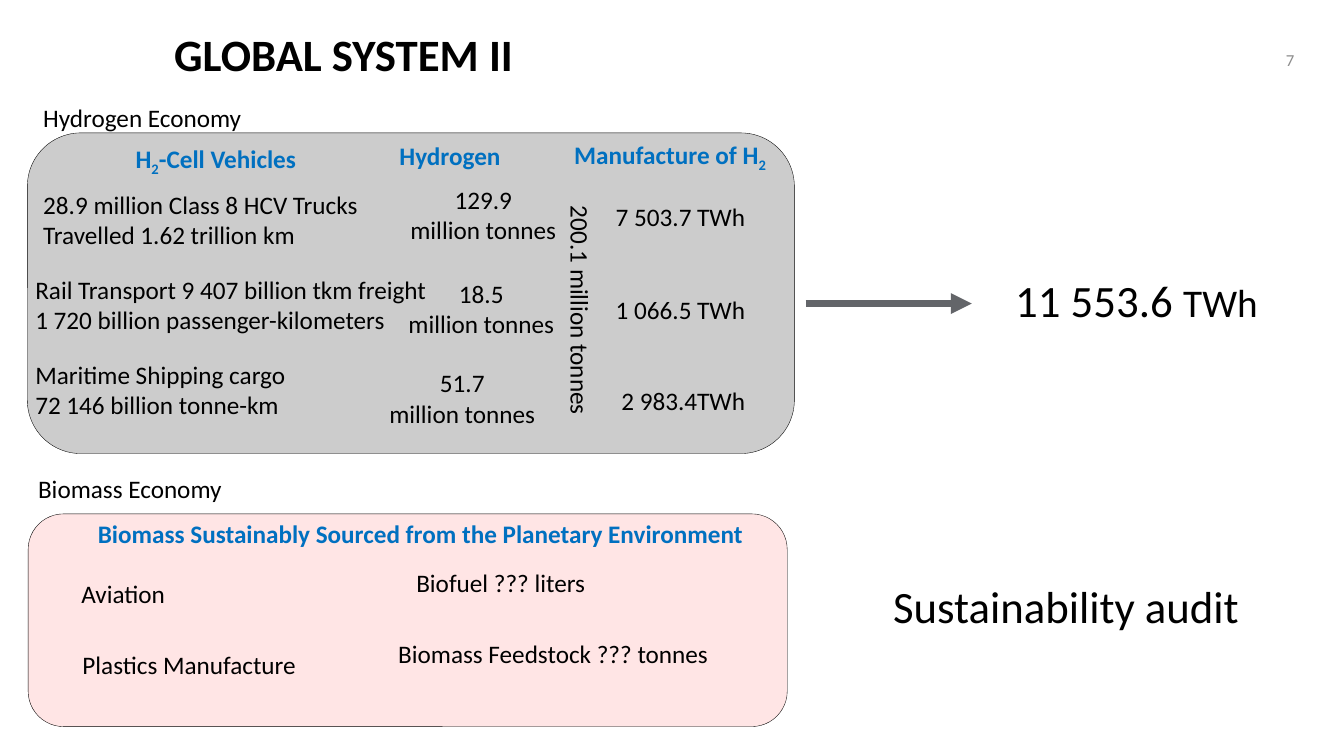
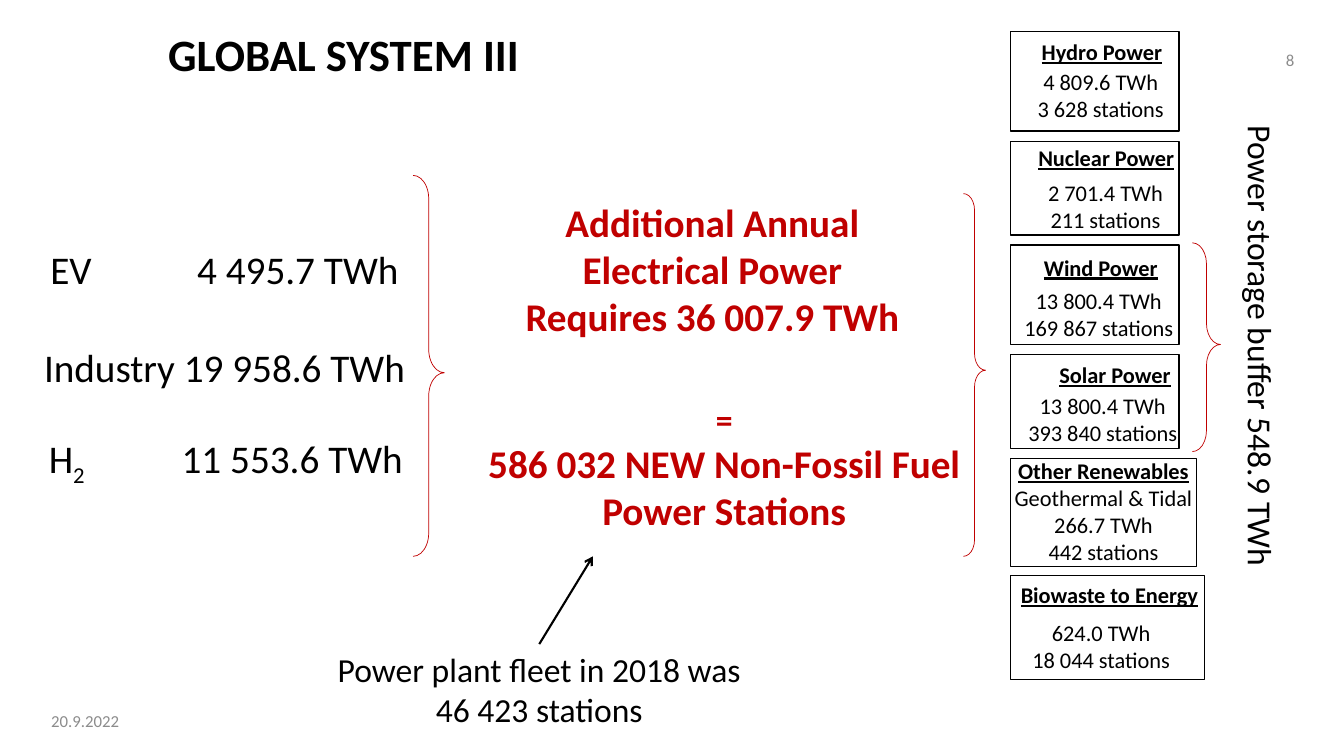
"""Builds two slides on the global energy system: hydrogen and biomass, then power needs."""
from lxml.etree import SubElement
from pptx import Presentation
from pptx.dml.color import RGBColor
from pptx.enum.shapes import MSO_CONNECTOR as Connector, MSO_SHAPE as Shape
from pptx.enum.text import PP_ALIGN as Align
from pptx.oxml.ns import qn
from pptx.util import Cm, Pt

FONT = "Calibri"
BLACK, GREY, BLUE, RED = "000000", "8C8C8C", "0070C0", "C00000"
SLATE, SILVER, ROSE = "636569", "CCCCCC", "FFDEDE"
LEFT, CENTER, RIGHT = Align.LEFT, Align.CENTER, Align.RIGHT
SHARE = {LEFT: 0, CENTER: 0.5, RIGHT: 1}

PANELS = [
    (0.69, 3.35, 19.33, 8.08, SILVER, None),
    (0.71, 12.95, 19.13, 5.36, ROSE, 76),
]
HEADINGS = [
    (5.44, 3.48, ("H", "2", "-Cell Vehicles")),
    (11.34, 3.4, "Hydrogen"),
    (16.89, 3.38, ("Manufacture of H", "2")),
    (10.6, 12.93, "Biomass Sustainably Sourced from the Planetary Environment"),
]
LEFT_LABELS = [
    (0.84, 2.46, ["Hydrogen Economy"]),
    (0.84, 4.65, ["28.9 million Class 8 HCV Trucks", "Travelled 1.62 trillion km"]),
    (0.64, 6.78, ["Rail Transport 9 407 billion tkm freight",
                  "1 720 billion passenger-kilometers"]),
    (0.64, 8.92, ["Maritime Shipping cargo", "72 146 billion tonne-km"]),
    (0.71, 11.79, ["Biomass Economy"]),
    (1.8, 14.45, ["Aviation"]),
    (1.83, 16.23, ["Plastics Manufacture"]),
]
CENTERED_LABELS = [
    (12.18, 4.52, ["129.9", "million tonnes"]),
    (12.13, 6.88, ["18.5", "million tonnes"]),
    (11.65, 9.14, ["51.7", "million tonnes"]),
    (17.15, 4.95, ["7 503.7 TWh"]),
    (17.15, 7.29, ["1 066.5 TWh"]),
    (17.22, 9.58, ["2 983.4TWh"]),
    (12.62, 14.17, ["Biofuel ??? liters"]),
    (13.94, 15.95, ["Biomass Feedstock ??? tonnes"]),
]

DEMANDS = [
    (1.02, 6.05, "EV\t4 495.7 TWh", 3.7),
    (0.86, 8.53, "Industry 19 958.6 TWh", None),
    (0.98, 10.82, ("H", "2", "\t11 553.6 TWh"), 3.35),
]
STATION_LEFT = 25.46
STATIONS = [
    {"name": "Hydro Power", "lines": ["4 809.6 TWh", "3 628 stations"],
     "frame": (0.79, 4.25, 2.51), "name_at": (27.77, 0.84), "lines_at": (27.74, 1.6)},
    {"name": "Nuclear Power", "lines": ["2 701.4 TWh", "211 stations"],
     "frame": (3.56, 4.25, 2.36), "name_at": (27.88, 3.51), "lines_at": (27.86, 4.39)},
    {"name": "Wind Power", "lines": ["13 800.4 TWh", "169 867 stations"],
     "frame": (6.17, 4.25, 2.51), "name_at": (27.74, 6.27), "lines_at": (27.69, 7.11)},
    {"name": "Solar Power", "lines": ["13 800.4 TWh", "393 840 stations"],
     "frame": (8.94, 4.25, 2.36), "name_at": (28.1, 8.97), "lines_at": (27.79, 9.75)},
    {"name": "Other Renewables",
     "lines": ["Geothermal & Tidal", "266.7 TWh", "442 stations"],
     "frame": (11.56, 4.7, 2.72), "name_at": (27.81, 11.4), "lines_at": (27.81, 12.08)},
    {"name": "Biowaste to Energy", "lines": ["624.0 TWh", "18 044 stations"],
     "frame": (14.5, 4.9, 2.62), "name_at": (27.96, 14.53), "lines_at": (27.75, 15.47)},
]
BRACES = [
    (10.41, 4.42, 0.79, 9.6, 0.518),
    (24.28, 4.88, 0.56, 9.14, 0.487),
    (30.05, 6.12, 0.71, 5.26, 0.487),
]


def rgb(code):
    """Turn a hex string into a colour."""
    return RGBColor.from_string(code)


def add_text(page, x, top, width, lines, size=18, color=BLACK, align=CENTER,
             bold=False, underline=False, rows=None, turn=0, tab=None):
    """Add text anchored at x; every second part of a tuple line is a subscript."""
    height = (rows or len(lines)) * size * 0.043 + 0.25
    box = page.shapes.add_textbox(Cm(x - width * SHARE[align]), Cm(top),
                                  Cm(width), Cm(height))
    box.rotation = turn
    frame = box.text_frame
    frame.word_wrap = True
    for index, line in enumerate(lines):
        para = frame.add_paragraph() if index else frame.paragraphs[0]
        para.alignment = align
        if tab:
            stops = SubElement(para._p.get_or_add_pPr(), qn("a:tabLst"))
            SubElement(stops, qn("a:tab"), pos=str(Cm(tab)), algn="l")
        font = para.font
        font.name, font.size, font.bold, font.underline = FONT, Pt(size), bold, underline
        font.color.rgb = rgb(color)
        for place, part in enumerate((line,) if isinstance(line, str) else line):
            span = para.add_run()
            span.text = part
            if place % 2:
                span._r.get_or_add_rPr().set("baseline", "-25000")
    return frame


def add_outline(page, kind, left, top, width, height, line, weight, fill=None, alpha=None):
    """Add an outlined preset shape with an optional, possibly translucent, fill."""
    shape = page.shapes.add_shape(kind, Cm(left), Cm(top), Cm(width), Cm(height))
    shape.shadow.inherit = False
    shape.line.color.rgb = rgb(line)
    shape.line.width = Pt(weight)
    if fill:
        shape.fill.solid()
        shape.fill.fore_color.rgb = rgb(fill)
    else:
        shape.fill.background()
    if alpha:
        tint = shape._element.spPr.find(qn("a:solidFill"))[0]
        SubElement(tint, qn("a:alpha"), val=str(alpha * 1000))
    return shape


def add_arrow(page, start, end, color, weight, head):
    """Add a straight arrow from start to end."""
    arrow = page.shapes.add_connector(Connector.STRAIGHT, *map(Cm, start + end))
    arrow.line.color.rgb = rgb(color)
    arrow.line.width = Pt(weight)
    SubElement(arrow.line._get_or_add_ln(), qn("a:tailEnd"), type=head)
    SubElement(arrow._element.spPr, qn("a:effectLst"))


def add_page(deck, title, number):
    """Add a blank page with the shared title and page number."""
    page = deck.slides.add_slide(deck.slide_layouts[6])
    add_text(page, 8.66, 0.56, 11.84, [title], 32, bold=True)
    add_text(page, 32.87, 1.14, 1.32, [number], 12, GREY, RIGHT)
    return page


def build_hydrogen_page(deck):
    """Show the hydrogen and biomass economies."""
    page = add_page(deck, "GLOBAL SYSTEM II", "7")
    for left, top, width, height, fill, alpha in PANELS:
        add_outline(page, Shape.ROUNDED_RECTANGLE, left, top, width, height,
                    BLACK, 0.25, fill, alpha)
    for x, top, heading in HEADINGS:
        add_text(page, x, top, 18, [heading], color=BLUE, bold=True)
    for x, top, lines in LEFT_LABELS:
        add_text(page, x, top, 11, lines, align=LEFT)
    for x, top, lines in CENTERED_LABELS:
        add_text(page, x, top, 9, lines)
    add_text(page, 14.63, 7.31, 6.2, ["200.1 million tonnes"], turn=90)
    add_arrow(page, (20.3, 7.65), (24.49, 7.65), SLATE, 5, "triangle")
    total = add_text(page, 28.64, 6.76, 8, ["11 553.6 "], 32)
    unit = total.paragraphs[0].add_run()
    unit.text = "TWh"
    unit.font.size = Pt(28)
    add_text(page, 26.87, 14.45, 10, ["Sustainability audit"], 32)


def build_power_page(deck):
    """Show the extra power needed and the stations that would supply it."""
    page = add_page(deck, "GLOBAL SYSTEM III", "8")
    add_text(page, 1.04, 17.78, 2.9, ["20.9.2022"], 12, GREY, LEFT)
    for x, top, line, tab in DEMANDS:
        add_text(page, x, top, 10.5, [line], 28, align=LEFT, tab=tab)
    add_text(page, 17.95, 4.88, 10.59,
             ["Additional Annual Electrical Power Requires 36 007.9 TWh"],
             28, RED, bold=True, rows=3)
    result = add_text(page, 18.25, 9.93, 12.83,
                      ["=", "586 032 NEW Non-Fossil Fuel Power Stations"],
                      28, RED, bold=True, rows=3)
    result.paragraphs[0].font.size = Pt(24)
    for station in STATIONS:
        add_outline(page, Shape.RECTANGLE, STATION_LEFT, *station["frame"], BLACK, 1)
        add_text(page, *station["name_at"], 6, [station["name"]], 16,
                 bold=True, underline=True)
        add_text(page, *station["lines_at"], 6, station["lines"], 16)
    for left, top, width, height, tip in BRACES:
        brace = add_outline(page, Shape.RIGHT_BRACE, left, top, width, height, RED, 0.5)
        brace.adjustments[0] = 0.745
        brace.adjustments[1] = tip
    add_text(page, 31.78, 8.07, 12.5, ["Power storage buffer 548.9 TWh"], 24, turn=90)
    add_text(page, 13.59, 16.23, 11.18,
             ["Power plant fleet in 2018 was 46 423 stations"], 24, rows=2)
    add_arrow(page, (13.59, 16.23), (14.94, 14.02), BLACK, 1.5, "arrow")


def main():
    """Build and save the deck."""
    deck = Presentation()
    deck.slide_width, deck.slide_height = Cm(33.87), Cm(19.05)
    build_hydrogen_page(deck)
    build_power_page(deck)
    deck.save("out.pptx")


if __name__ == "__main__":
    main()
